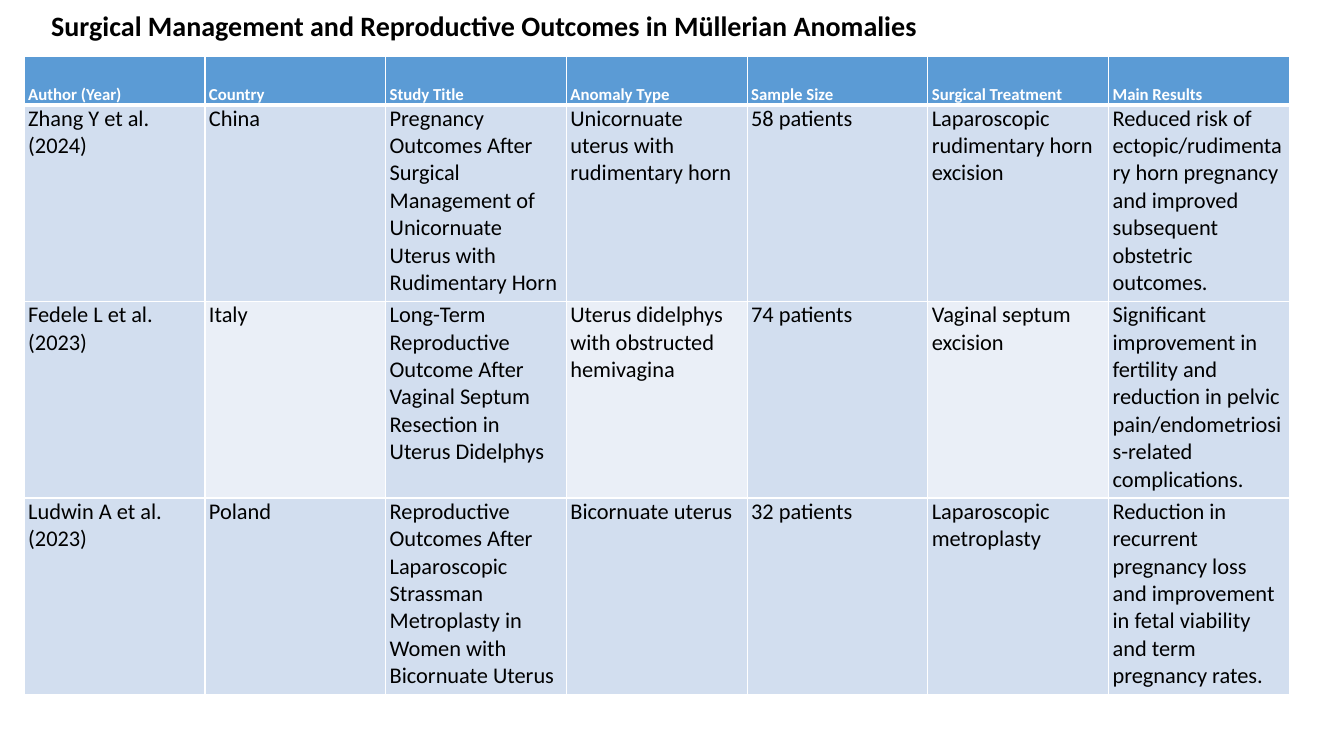
from dataclasses import astuple, dataclass

from lxml.etree import SubElement
from pptx import Presentation
from pptx.dml.color import RGBColor as RGB
from pptx.enum.text import MSO_ANCHOR as Anchor
from pptx.oxml.ns import qn
from pptx.util import Inches, Pt

COLORS = {
    "text": "000000",
    "white": "FFFFFF",
    "header": "5B9BD5",
    "band": "D2DEEF",
    "light": "EAEFF7",
}
HEADER_FONT = {"name": "Calibri", "size": Pt(12), "bold": True}
BODY_FONT = {"name": "Calibri", "size": Pt(16), "bold": False}
TITLE_FONT = {"name": "Calibri", "size": Pt(20), "bold": True}
CELL_FORMAT = {
    "margin_left": Inches(0.04),
    "margin_right": Inches(0.04),
    "margin_top": 0,
    "margin_bottom": 0,
}
TABLE_WIDTH = 12.55
ROW_HEIGHTS = [0.48, 1.95, 1.95, 1.95]


@dataclass
class Study:
    author: str
    country: str
    title: str
    anomaly: str
    sample: str
    treatment: str
    results: str


STUDIES = [
    Study("Author (Year)", "Country", "Study Title", "Anomaly Type",
          "Sample Size", "Surgical Treatment", "Main Results"),
    Study("Zhang Y et al. (2024)", "China",
          "Pregnancy Outcomes After Surgical Management of Unicornuate Uterus "
          "with Rudimentary Horn",
          "Unicornuate uterus with rudimentary horn", "58 patients",
          "Laparoscopic rudimentary horn excision",
          "Reduced risk of ectopic/rudimentary horn pregnancy and improved "
          "subsequent obstetric outcomes."),
    Study("Fedele L et al. (2023)", "Italy",
          "Long-Term Reproductive Outcome After Vaginal Septum Resection in "
          "Uterus Didelphys",
          "Uterus didelphys with obstructed hemivagina", "74 patients",
          "Vaginal septum excision",
          "Significant improvement in fertility and reduction in pelvic "
          "pain/endometriosis-related complications."),
    Study("Ludwin A et al. (2023)", "Poland",
          "Reproductive Outcomes After Laparoscopic Strassman Metroplasty in "
          "Women with Bicornuate Uterus",
          "Bicornuate uterus", "32 patients", "Laparoscopic metroplasty",
          "Reduction in recurrent pregnancy loss and improvement in fetal "
          "viability and term pregnancy rates."),
]


def set_all(target: object, values: dict) -> None:
    for name, value in values.items():
        setattr(target, name, value)


def add_run(p, text: str, font: dict, color: str) -> None:
    r = p.add_run()
    r.text = text
    set_all(r.font, font)
    r.font.color.rgb = RGB.from_string(COLORS[color])


def set_borders(cell, widths: dict[str, int]) -> None:
    tc_pr = cell._tc.get_or_add_tcPr()
    for side, width in widths.items():
        line = SubElement(tc_pr, qn(f"a:ln{side}"), w=str(Pt(width)))
        fill = SubElement(line, qn("a:solidFill"))
        SubElement(fill, qn("a:srgbClr"), val=COLORS["white"])


def fill_cell(cell, text: str, row: int, col: int) -> None:
    header = row == 0
    set_all(cell, CELL_FORMAT)
    cell.vertical_anchor = Anchor.BOTTOM if header else Anchor.TOP
    # The line under the header is thicker than the rest
    set_borders(cell, {"L": 1, "R": 1, "T": 3 if row == 1 else 1,
                       "B": 3 if header else 1})
    # Even rows and odd columns cross in the light shade
    light = row % 2 == 0 and col % 2 == 1
    shade = "header" if header else "light" if light else "band"
    cell.fill.solid()
    cell.fill.fore_color.rgb = RGB.from_string(COLORS[shade])
    p = cell.text_frame.paragraphs[0]
    p.space_after = Pt(1.8)
    add_run(p, text, HEADER_FONT if header else BODY_FONT,
            "white" if header else "text")


def add_title(s, text: str) -> None:
    box = s.shapes.add_textbox(Inches(0.41), Inches(-0.02), Inches(12.01), Inches(0.58))
    tf = box.text_frame
    set_all(tf, {"word_wrap": True, "vertical_anchor": Anchor.MIDDLE})
    p = tf.paragraphs[0]
    p.line_spacing = 0.9
    add_run(p, text, TITLE_FONT, "text")


def add_study_table(s, studies: list[Study]) -> None:
    rows = [astuple(study) for study in studies]
    table = s.shapes.add_table(
        len(rows), len(rows[0]), Inches(0.24), Inches(0.56),
        Inches(TABLE_WIDTH), Inches(sum(ROW_HEIGHTS))).table
    for column in table.columns:
        column.width = Inches(TABLE_WIDTH / len(rows[0]))
    for i, (height, values) in enumerate(zip(ROW_HEIGHTS, rows)):
        table.rows[i].height = Inches(height)
        for j, text in enumerate(values):
            fill_cell(table.cell(i, j), text, i, j)


def main() -> None:
    prs = Presentation()
    prs.slide_width, prs.slide_height = Inches(13.33), Inches(7.5)
    s = prs.slides.add_slide(prs.slide_layouts[6])
    add_title(s, "Surgical Management and Reproductive Outcomes in Müllerian Anomalies")
    add_study_table(s, STUDIES)
    prs.save("out.pptx")


if __name__ == "__main__":
    main()
